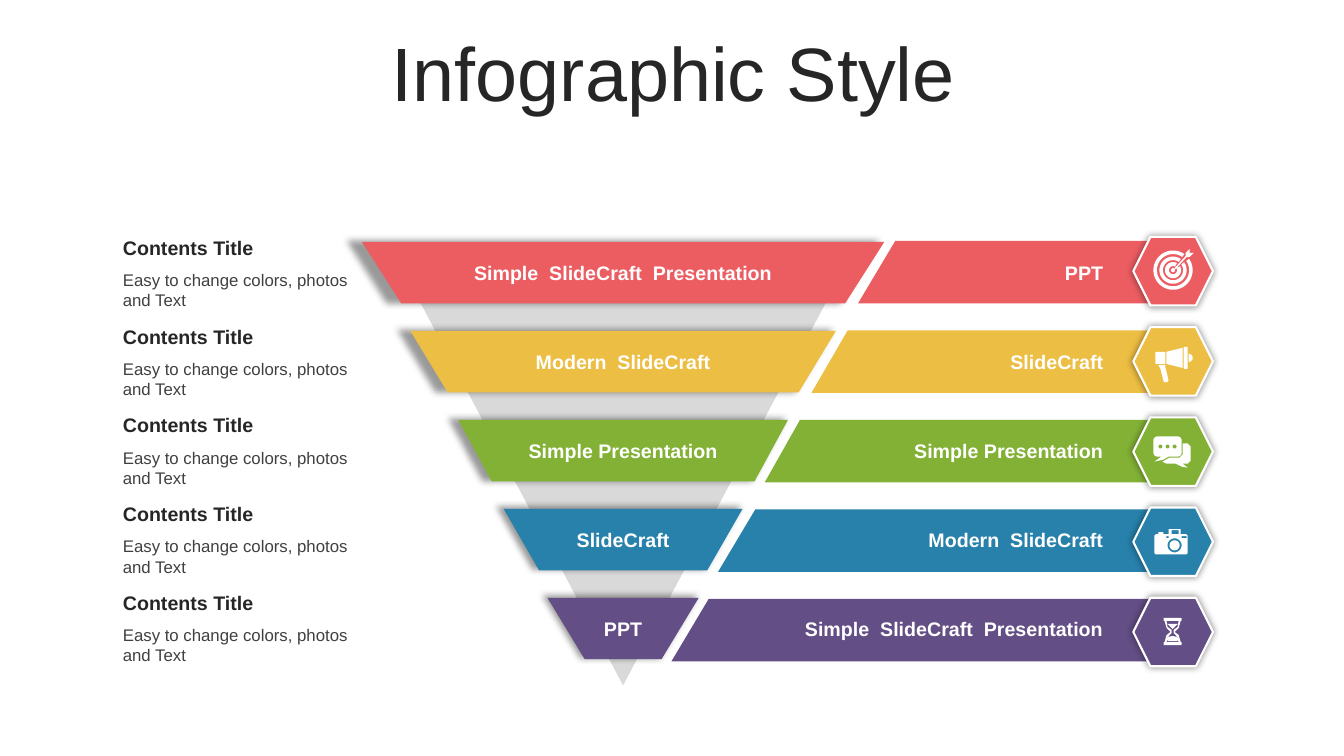
import math

import pptx
import pptx.dml.color
import pptx.enum.shapes
import pptx.enum.text
import pptx.oxml
import pptx.oxml.ns
import pptx.util

Inches = pptx.util.Inches
SHAPES = pptx.enum.shapes.MSO_SHAPE
ALIGN = pptx.enum.text.PP_ALIGN
COLORS = {
    "title": "262626", "body": "404040", "white": "FFFFFF", "cone": "D9D9D9",
    "red": "EC5D62", "yellow": "EDBE44", "green": "82B135",
    "blue": "2781AB", "purple": "634E85",
}
SHADOW = (
    '<a:outerShdw %s blurRad="63500" dist="0" sx="102000" sy="102000" algn="ctr"'
    ' rotWithShape="0"><a:srgbClr val="000000"><a:alpha val="40000"/></a:srgbClr>'
    '</a:outerShdw>' % pptx.oxml.ns.nsdecls("a")
)
# Row color, width of the funnel slice, slant of the slice, slant of the band
ROWS = [
    ("red", 5.18, 0.637, 0.37),
    ("yellow", 4.22, 0.606, 0.36),
    ("green", 3.27, 0.544, 0.35),
    ("blue", 2.37, 0.575, 0.37),
    ("purple", 1.5, 0.606, 0.37),
]
LABELS = [
    ("Simple  SlideCraft  Presentation", 3.79),
    ("Modern  SlideCraft", 3.09),
    ("Simple Presentation", 2.39),
    ("SlideCraft", 2.15),
    ("PPT", 1.1),
]
FUNNEL_CENTER, LABEL_RIGHT, BAND_RIGHT = 6.18, 11.04, 11.84


def arc(x, y, radius, start=0, end=360):
    """Points along an arc; angles in degrees, counter-clockwise from the right."""
    steps = max(4, round(abs(end - start) / 10))
    angles = [math.radians(start + (end - start) * i / steps) for i in range(steps + 1)]
    return [(x + radius * math.cos(a), y - radius * math.sin(a)) for a in angles]


def open_ring(x, y, outer, inner, gap):
    """Ring with a gap of the given half angle toward the upper right."""
    return arc(x, y, outer, 45 + gap, 405 - gap) + arc(x, y, inner, 405 - gap, 45 + gap)


def rounded(left, top, right, bottom, radius=0.0):
    if not radius:
        return [(left, top), (right, top), (right, bottom), (left, bottom)]
    return (arc(right - radius, top + radius, radius, 0, 90)
            + arc(left + radius, top + radius, radius, 90, 180)
            + arc(left + radius, bottom - radius, radius, 180, 270)
            + arc(right - radius, bottom - radius, radius, 270, 360))


def mirrored(points, axis):
    """Close a left half outline with its reflection."""
    return points + [(2 * axis - x, y) for x, y in reversed(points)]


TARGET = [
    open_ring(11.635, 2.68, 0.195, 0.16, 10),
    open_ring(11.635, 2.68, 0.135, 0.1, 10),
    open_ring(11.635, 2.68, 0.08, 0.04, 16),
    arc(11.635, 2.68, 0.02),
    [(11.8, 2.47), (11.8, 2.51), (11.84, 2.51), (11.8, 2.55), (11.77, 2.55),
     (11.66, 2.67), (11.65, 2.66), (11.76, 2.54), (11.76, 2.51)],
]
MEGAPHONE = [
    [(11.49, 3.62), (11.56, 3.62), (11.56, 3.65), (11.59, 3.77), (11.58, 3.79),
     (11.55, 3.79), (11.54, 3.78), (11.51, 3.66)],
    arc(11.79, 3.55, 0.04, -90, 90),
    rounded(11.46, 3.49, 11.56, 3.61, 0.01),
    [(11.73, 3.45), (11.73, 3.65), (11.57, 3.61), (11.57, 3.49)],
    rounded(11.74, 3.44, 11.78, 3.66, 0.01),
]
CHAT = [
    rounded(11.44, 4.33, 11.72, 4.53, 0.04),
    [(11.52, 4.53), (11.59, 4.53), (11.54, 4.56), (11.45, 4.58)],
    *[arc(x, 4.43, 0.02) for x in (11.51, 11.58, 11.65)],
    [(11.73, 4.4), (11.78, 4.4), (11.81, 4.43), (11.81, 4.57), (11.78, 4.6),
     (11.73, 4.6), (11.78, 4.64), (11.72, 4.63), (11.66, 4.6), (11.57, 4.6),
     (11.53, 4.58), (11.6, 4.54), (11.7, 4.54), (11.73, 4.51)],
]
CAMERA = [
    rounded(11.45, 5.3, 11.78, 5.5, 0.02),
    arc(11.65, 5.41, 0.07),
    arc(11.65, 5.41, 0.05),
    rounded(11.57, 5.32, 11.59, 5.34),
    rounded(11.72, 5.32, 11.77, 5.34),
    rounded(11.49, 5.28, 11.54, 5.3),
    mirrored([(11.59, 5.3), (11.59, 5.25), (11.71, 5.25), (11.71, 5.3),
              (11.69, 5.3), (11.69, 5.26)][:2], 11.65)
    + [(11.69, 5.3), (11.69, 5.26), (11.62, 5.26), (11.62, 5.3)],
]
CAMERA[-1] = [(11.59, 5.3), (11.59, 5.25), (11.71, 5.25), (11.71, 5.3),
              (11.69, 5.3), (11.69, 5.26), (11.62, 5.26), (11.62, 5.3)]
HOURGLASS = [
    rounded(11.54, 6.13, 11.72, 6.16, 0.01),
    rounded(11.54, 6.37, 11.72, 6.4, 0.01),
    mirrored([(11.55, 6.16), (11.57, 6.23), (11.61, 6.27), (11.57, 6.3), (11.55, 6.37)], 11.63),
    mirrored([(11.57, 6.16), (11.58, 6.22), (11.62, 6.25), (11.62, 6.28),
              (11.59, 6.31), (11.57, 6.37)], 11.63),
    [(11.58, 6.19), (11.68, 6.19), (11.63, 6.24)],
    mirrored([(11.63, 6.31), (11.58, 6.32), (11.58, 6.36)], 11.63),
]
ICONS = [TARGET, MEGAPHONE, CHAT, CAMERA, HOURGLASS]


class Painter:
    """Holds the font and the current page, and draws each kind of element."""

    def __init__(self, page, font="Arial"):
        self.page = page
        self.font = font

    def finish(self, shape, fill, line=None, shadow=False):
        shape.fill.solid()
        shape.fill.fore_color.rgb = pptx.dml.color.RGBColor.from_string(COLORS[fill])
        if line:
            shape.line.color.rgb = pptx.dml.color.RGBColor.from_string(COLORS[line])
            shape.line.width = pptx.util.Pt(1.5)
        else:
            shape.line.fill.background()
        shape.shadow.inherit = False
        if shadow:
            effects = shape._element.spPr.find(pptx.oxml.ns.qn("a:effectLst"))
            effects.append(pptx.oxml.parse_xml(SHADOW))

    def preset(self, kind, left, top, width, height, fill, rotation=0, slant=None, **style):
        shape = self.page.shapes.add_shape(
            kind, Inches(left), Inches(top), Inches(width), Inches(height))
        shape.rotation = rotation
        if slant is not None:
            shape.adjustments[0] = slant
        self.finish(shape, fill, **style)

    def outline(self, contours, fill):
        """Draw closed contours as one shape; inner contours become holes."""
        paths = [[(Inches(x), Inches(y)) for x, y in points] for points in contours]
        builder = self.page.shapes.build_freeform(*paths[0][0])
        for number, points in enumerate(paths):
            if number:
                builder.move_to(*points[0])
            builder.add_line_segments(points[1:], close=True)
        self.finish(builder.convert_to_shape(), fill)

    def text(self, text, left, top, width, height, size=14, color="white", bold=True,
             align=ALIGN.LEFT, anchor=pptx.enum.text.MSO_ANCHOR.TOP, line_spacing=None):
        box = self.page.shapes.add_textbox(
            Inches(left), Inches(top), Inches(width), Inches(height))
        box.text_frame.word_wrap = True
        box.text_frame.vertical_anchor = anchor
        para = box.text_frame.paragraphs[0]
        para.alignment = align
        para.line_spacing = line_spacing
        span = para.add_run()
        span.text = text
        span.font.name = self.font
        span.font.size = pptx.util.Pt(size)
        span.font.bold = bold
        span.font.color.rgb = pptx.dml.color.RGBColor.from_string(COLORS[color])


def main():
    deck = pptx.Presentation()
    deck.slide_width, deck.slide_height = Inches(13.33), Inches(7.5)
    painter = Painter(deck.slides.add_slide(deck.slide_layouts[6]))
    painter.text("Infographic Style", 0.35, 0.37, 12.66, 0.79, size=54, color="title",
                 bold=False, align=ALIGN.CENTER, line_spacing=0.9,
                 anchor=pptx.enum.text.MSO_ANCHOR.MIDDLE)
    painter.preset(SHAPES.ISOSCELES_TRIANGLE, 3.85, 2.4, 4.66, 4.4, "cone", rotation=180)

    for row, (color, width, slant, band_slant) in enumerate(ROWS):
        painter.preset(SHAPES.TRAPEZOID, FUNNEL_CENTER - width / 2, 2.4 + 0.8825 * row,
                       width, 0.61, color, rotation=180, slant=slant, shadow=True)
        label_top = 2.54 + 0.8825 * row
        label, label_width = LABELS[row]
        painter.text(label, FUNNEL_CENTER - label_width / 2, label_top, label_width, 0.34,
                     align=ALIGN.CENTER)
        painter.text("Contents Title", 1.12, 2.29 + 0.88 * row, 2.59, 0.34, color="title")
        painter.text("Easy to change colors, photos and Text", 1.12, 2.63 + 0.88 * row,
                     2.59, 0.5, size=12, color="body", bold=False)

        band_left, band_top = 8.51 - 0.4625 * row, 2.39 + 0.8875 * row
        band_bottom = band_top + 0.62
        painter.outline([[(band_left + band_slant, band_top), (BAND_RIGHT, band_top),
                          (BAND_RIGHT, band_bottom), (band_left, band_bottom)]], color)
        painter.preset(SHAPES.HEXAGON, 11.24, 2.35 + 0.895 * row, 0.79, 0.68, color,
                       line="white", shadow=True)
        painter.outline(ICONS[row], "white")
        label, label_width = LABELS[-1 - row]
        painter.text(label, LABEL_RIGHT - label_width, label_top, label_width, 0.34,
                     align=ALIGN.RIGHT)
    deck.save("out.pptx")


if __name__ == "__main__":
    main()
